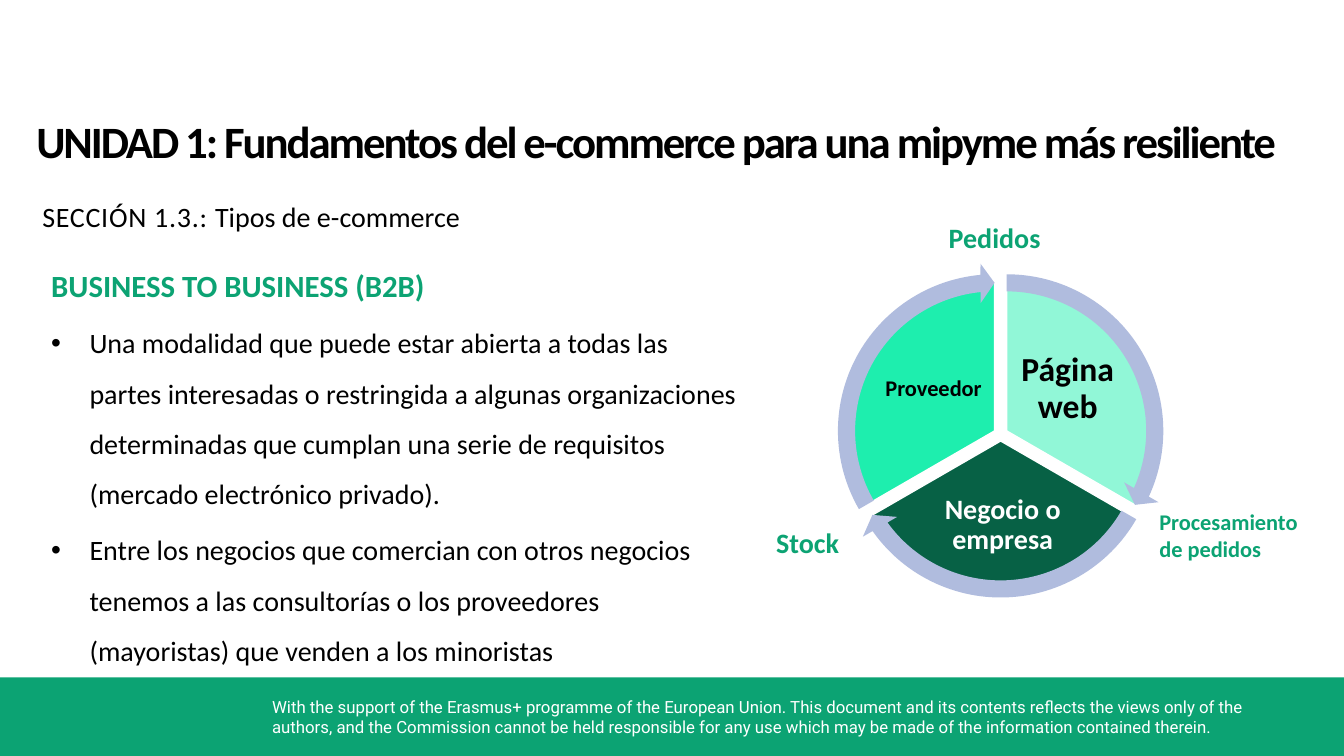
from lxml import etree
from pptx import Presentation
from pptx.dml.color import RGBColor
from pptx.enum.shapes import MSO_SHAPE
from pptx.enum.text import MSO_ANCHOR, PP_ALIGN
from pptx.oxml.ns import qn
from pptx.util import Inches, Pt

PIE, ARROW, RECT = MSO_SHAPE.PIE, MSO_SHAPE.CIRCULAR_ARROW, MSO_SHAPE.RECTANGLE
TOP, MIDDLE = MSO_ANCHOR.TOP, MSO_ANCHOR.MIDDLE
LEFT, CENTER = PP_ALIGN.LEFT, PP_ALIGN.CENTER

COLORS = {
    "green": "0CA373",
    "mint": "91F7D7",
    "dark": "076145",
    "bright": "1EEEAE",
    "ring": "B0BCDE",
    "black": "000000",
    "white": "FFFFFF",
}


def rgb(name):
    return RGBColor.from_string(COLORS[name])


def add_text(slide, box, paras, size=20, color="black", bold=False, font="Calibri",
             align=LEFT, anchor=TOP, inset=(0.1, 0.05, 0.1, 0.05), line=None):
    """Each paragraph is a string or a dict: runs, size, color, bold, before, bullet.

    A run is a pair of text and letter spacing in points.
    """
    frame = slide.shapes.add_textbox(*map(Inches, box)).text_frame
    frame.word_wrap = True
    frame.vertical_anchor = anchor
    (frame.margin_left, frame.margin_top,
     frame.margin_right, frame.margin_bottom) = map(Inches, inset)
    for i, item in enumerate(paras):
        if isinstance(item, str):
            item = {"runs": [(item, 0)]}
        para = frame.paragraphs[0] if i == 0 else frame.add_paragraph()
        para.alignment = align
        if line:
            para.line_spacing = line
        if "before" in item:
            para.space_before = Pt(item["before"])
        if item.get("bullet"):
            props = para._p.get_or_add_pPr()
            props.set("marL", str(Inches(0.38)))
            props.set("indent", str(Inches(-0.38)))
            etree.SubElement(props, qn("a:buFont")).set("typeface", "Arial")
            etree.SubElement(props, qn("a:buChar")).set("char", "•")
        for text, gap in item["runs"]:
            run = para.add_run()
            run.text = text
            run.font.name = font
            run.font.size = Pt(item.get("size", size))
            run.font.bold = item.get("bold", bold)
            run.font.color.rgb = rgb(item.get("color", color))
            if gap:
                run._r.get_or_add_rPr().set("spc", str(int(gap * 100)))


def add_form(slide, kind, box, fill, adjust=(), line=None):
    shape = slide.shapes.add_shape(kind, *map(Inches, box))
    shape.shadow.inherit = False
    shape.fill.solid()
    shape.fill.fore_color.rgb = rgb(fill)
    if line:
        shape.line.color.rgb = rgb(line)
        shape.line.width = Pt(1)
    else:
        shape.line.fill.background()
    for i, value in enumerate(adjust):
        shape.adjustments[i] = value


def add_footer(slide, box):
    x, y, w, h = box
    add_form(slide, RECT, box, "green")
    add_text(slide, (x + 2.6, y + 0.14, 10.42, 0.5), [
        "With the support of the Erasmus+ programme of the European Union. "
        "This document and its contents reflects the views only of the authors, "
        "and the Commission cannot be held responsible for any use which may be "
        "made of the information contained therein."
    ], size=12, color="white", font="Roboto")


def add_header(slide, box):
    x, y, w, h = box
    add_text(slide, (x, y, w, 0.55), [{"runs": [
        ("UNIDAD 1: Fundamentos del e-commerce para una mipyme más resiliente", -1.5)]}],
        size=32, bold=True, inset=(0.01, 0.01, 0, 0))
    add_text(slide, (x + 0.06, y + 0.84, 4.4, 0.35), [{"runs": [
        ("SECCIÓN 1.3.: ", 0.5), ("Tipos de e-commerce", 0)]}],
        inset=(0.01, 0.02, 0, 0))


def add_body(slide, box):
    points = [
        "Una modalidad que puede estar abierta a todas las partes interesadas o "
        "restringida a algunas organizaciones determinadas que cumplan una serie "
        "de requisitos (mercado electrónico privado).",
        "Entre los negocios que comercian con otros negocios tenemos a las "
        "consultorías o los proveedores (mayoristas) que venden a los minoristas",
    ]
    head = {"runs": [("BUSINESS TO BUSINESS (B2B)", 0)],
            "size": 22, "color": "green", "bold": True}
    items = [{"runs": [(text, 0)], "before": 4, "bullet": True} for text in points]
    add_text(slide, box, [head] + items, line=1.5)


def add_wheel(slide, box):
    x, y, size, _ = box
    inset, tip = 0.18, 3.275
    # Offset, start and end angle, fill, label, label box, text size, text colour
    parts = [
        (0.12, 0, 162, 18, "mint", "Página web", (1.86, 0.81, 1.06, 0.88), 24, "black"),
        (0.06, 0.1, 18, 90, "dark", "Negocio o empresa", (0.95, 2.21, 1.59, 0.78), 20, "white"),
        (0, 0, 90, 162, "bright", "Proveedor", (0.53, 0.81, 1.06, 0.88), 16, "black"),
    ]
    # Slices with their labels
    for dx, dy, start, end, fill, label, (lx, ly, lw, lh), points, color in parts:
        span = size - 2 * inset
        add_form(slide, PIE, (x + dx + inset, y + dy + inset, span, span),
                 fill, (start, end), line="white")
        add_text(slide, (x + lx, y + ly, lw, lh), [label], size=points, color=color,
                 bold=True, align=CENTER, anchor=MIDDLE, inset=(0.03,) * 4, line=0.9)
    # Ring of arrows
    for dx, dy, start, end, *_ in parts:
        add_form(slide, ARROW, (x + dx, y + dy, size, size), "ring",
                 (0.051, tip, end - tip, start, 0.059))
    # Names of the flows
    flows = [
        ("Stock", (-0.6, 2.55, 0.9, 0.44), 20),
        ("Procesamiento de pedidos", (3.2, 2.38, 1.67, 0.64), 16),
        ("Pedidos", (1.11, -0.47, 1.22, 0.44), 20),
    ]
    for label, (lx, ly, lw, lh), points in flows:
        add_text(slide, (x + lx, y + ly, lw, lh), [label],
                 size=points, color="green", bold=True)


def main():
    deck = Presentation()
    deck.slide_width, deck.slide_height = Inches(13.33), Inches(7.5)
    slide = deck.slides.add_slide(deck.slide_layouts[6])
    add_footer(slide, (0, 6.72, 13.33, 0.78))
    add_header(slide, (0.35, 1.12, 12.88, 1.19))
    add_body(slide, (0.41, 2.41, 7.07, 4.27))
    add_wheel(slide, (8.2, 2.61, 3.33, 3.33))
    deck.save("out.pptx")


if __name__ == "__main__":
    main()
